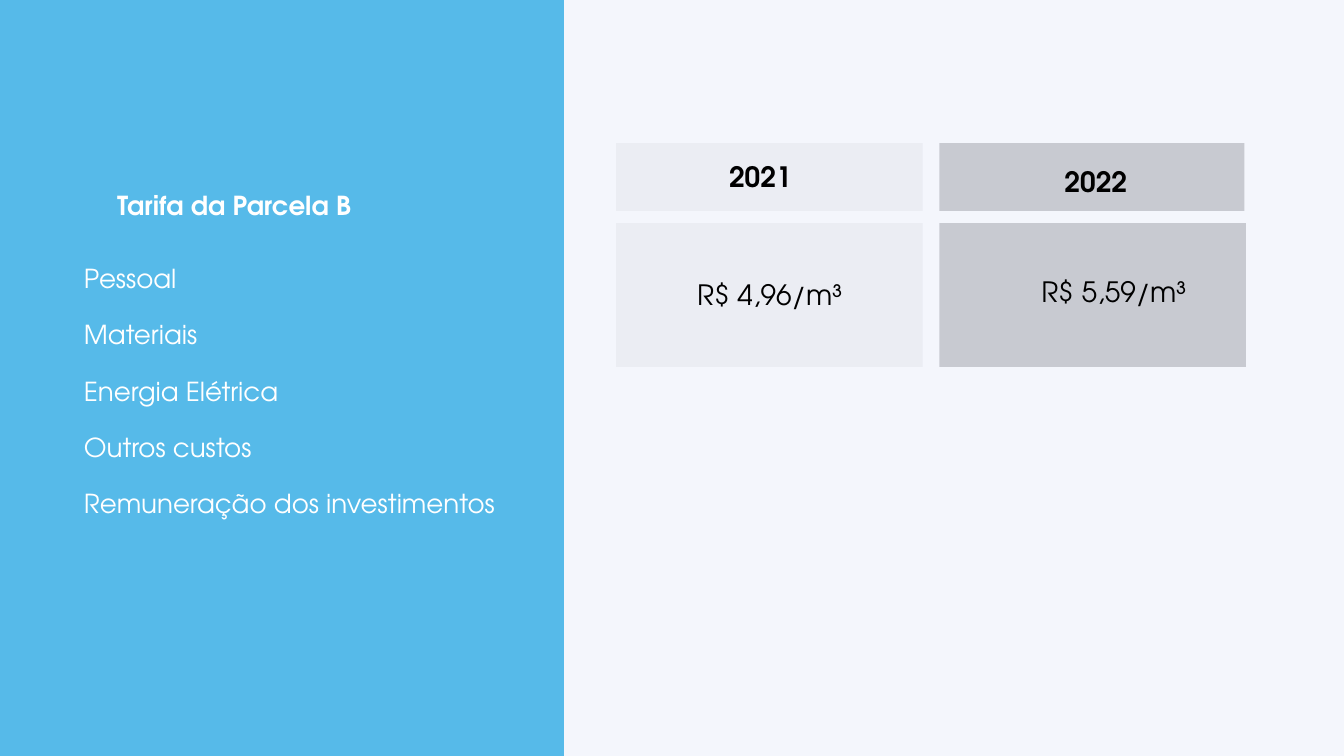
"""Build the slide comparing the Parcela B tariff in 2021 and 2022."""
from lxml.etree import SubElement
from pptx import Presentation
from pptx.dml.color import RGBColor
from pptx.enum.shapes import MSO_SHAPE
from pptx.enum.text import MSO_AUTO_SIZE, PP_ALIGN
from pptx.oxml.ns import qn
from pptx.util import Inches, Pt

BACKGROUND = RGBColor(0xF4, 0xF6, 0xFC)
BLUE = RGBColor(0x14, 0xA1, 0xE2)
NAVY = RGBColor(0x19, 0x1B, 0x27)
WHITE = RGBColor(0xFF, 0xFF, 0xFF)
BLACK = RGBColor(0x00, 0x00, 0x00)

COSTS = ["Pessoal", "Materiais", "Energia Elétrica", "Outros custos",
         "Remuneração dos investimentos"]


class Painter:
    """Hold the font and the current page, and draw on it."""

    def __init__(self, page, font):
        self.page = page
        self.font = font

    def background(self, color):
        """Fill the page background."""
        fill = self.page.background.fill
        fill.solid()
        fill.fore_color.rgb = color

    def panel(self, left, top, width, height, color, opacity):
        """Add a borderless rectangle with an opacity in percent."""
        box = self.page.shapes.add_shape(
            MSO_SHAPE.RECTANGLE, Inches(left), Inches(top), Inches(width), Inches(height))
        box.shadow.inherit = False
        box.line.fill.background()
        box.fill.solid()
        box.fill.fore_color.rgb = color
        tint = box.element.spPr.find(qn("a:solidFill"))[0]
        SubElement(tint, qn("a:alpha"), val=str(opacity * 1000))

    def label(self, text, left, top, width, height, size, spacing, color,
              bold=False, align=PP_ALIGN.LEFT):
        """Add a one-line text box without margins."""
        box = self.page.shapes.add_textbox(
            Inches(left), Inches(top), Inches(width), Inches(height))
        frame = box.text_frame
        frame.margin_left = frame.margin_right = 0
        frame.margin_top = frame.margin_bottom = 0
        frame.word_wrap = True
        frame.auto_size = MSO_AUTO_SIZE.SHAPE_TO_FIT_TEXT
        para = frame.paragraphs[0]
        para.alignment = align
        para.line_spacing = Pt(spacing)
        span = para.add_run()
        span.text = text
        span.font.name = self.font
        span.font.size = Pt(size)
        span.font.bold = bold
        span.font.color.rgb = color


def main():
    """Draw the slide and save the deck."""
    deck = Presentation()
    deck.slide_width = Inches(20)
    deck.slide_height = Inches(11.25)
    page = deck.slides.add_slide(deck.slide_layouts[6])
    painter = Painter(page, "TeX Gyre Adventor")
    painter.background(BACKGROUND)

    painter.panel(0, 0, 8.39, 11.25, BLUE, 70)
    painter.label("Tarifa da Parcela B", 0.96, 2.75, 5.05, 0.51, 28, 39, WHITE,
                  bold=True, align=PP_ALIGN.CENTER)
    for row, cost in enumerate(COSTS):
        painter.label(cost, 1.25, 3.96 + 0.835 * row, 7.13, 0.42, 28, 30, WHITE)

    columns = [
        (9.17, 4.56, 4, "2021", (10.85, 2.37), "R$ 4,96/m³", (9.8, 4.13)),
        (13.98, 4.54, 20, "2022", (15.84, 2.45), "R$ 5,59/m³", (14.92, 4.08)),
    ]
    for left, head_width, opacity, year, year_at, price, price_at in columns:
        painter.panel(left, 2.13, head_width, 1.01, NAVY, opacity)
        painter.panel(left, 3.32, 4.56, 2.14, NAVY, opacity)
        painter.label(year, *year_at, 3.3, 0.51, 30, 36, BLACK, bold=True)
        painter.label(price, *price_at, 3.3, 0.51, 30, 36, BLACK, align=PP_ALIGN.CENTER)

    deck.save("out.pptx")


if __name__ == "__main__":
    main()
